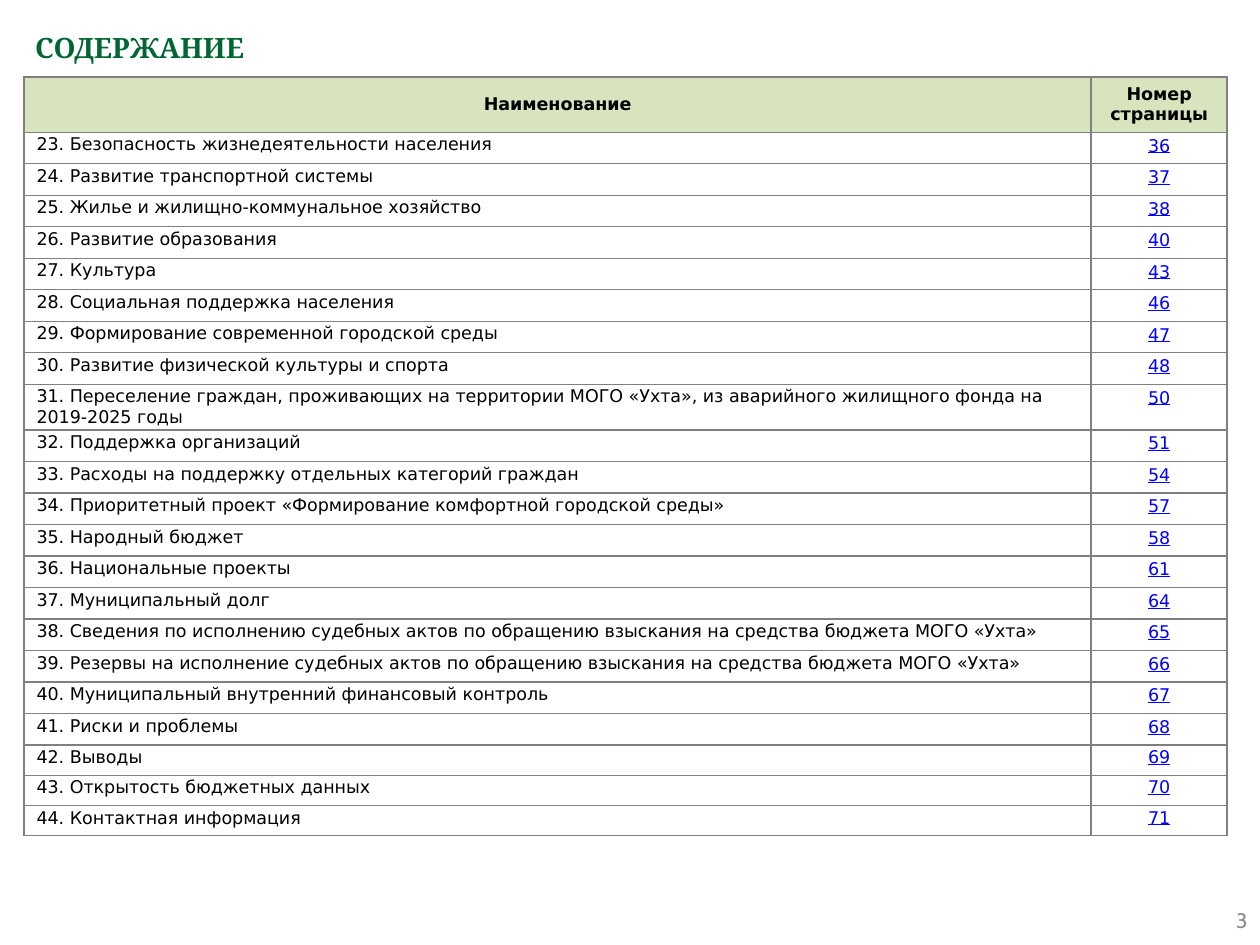
from lxml import etree
from pptx import Presentation
from pptx.dml.color import RGBColor
from pptx.enum.text import MSO_ANCHOR, PP_ALIGN
from pptx.oxml.ns import qn
from pptx.util import Inches, Pt

LEFT, CENTER, RIGHT = PP_ALIGN.LEFT, PP_ALIGN.CENTER, PP_ALIGN.RIGHT
TOP, MIDDLE = MSO_ANCHOR.TOP, MSO_ANCHOR.MIDDLE

BLACK, BLUE, GREEN, GRAY = "000000", "0000FF", "006633", "8C8C8C"
HEAD_FILL, BORDER = "D7E4BD", "808080"
FIRST = 23
TOPICS = [
    ("Безопасность жизнедеятельности населения", 36),
    ("Развитие транспортной системы", 37),
    ("Жилье и жилищно-коммунальное хозяйство", 38),
    ("Развитие образования", 40),
    ("Культура", 43),
    ("Социальная поддержка населения", 46),
    ("Формирование современной городской среды", 47),
    ("Развитие физической культуры и спорта", 48),
    ("Переселение граждан, проживающих на территории МОГО «Ухта», "
     "из аварийного жилищного фонда на 2019-2025 годы", 50),
    ("Поддержка организаций", 51),
    ("Расходы на поддержку отдельных категорий граждан", 54),
    ("Приоритетный проект «Формирование комфортной городской среды»", 57),
    ("Народный бюджет", 58),
    ("Национальные проекты", 61),
    ("Муниципальный долг", 64),
    ("Сведения по исполнению судебных актов по обращению взыскания "
     "на средства бюджета МОГО «Ухта»", 65),
    ("Резервы на исполнение судебных актов по обращению взыскания "
     "на средства бюджета МОГО «Ухта»", 66),
    ("Муниципальный внутренний финансовый контроль", 67),
    ("Риски и проблемы", 68),
    ("Выводы", 69),
    ("Открытость бюджетных данных", 70),
    ("Контактная информация", 71),
]
HEAD_ROW, ROW, LAST_ROW = 0.44, 0.25, 0.24
LAST_COUNT = 3


def color(code):
    return RGBColor.from_string(code)


def write(frame, text, font, size, code, align=LEFT, bold=False, line=False):
    frame.text = text
    par = frame.paragraphs[0]
    par.alignment = align
    style = par.runs[0].font
    style.name, style.size = font, Pt(size)
    style.bold, style.underline = bold, line
    style.color.rgb = color(code)
    return par


def add_text(slide, box, text, font, size, code, anchor=TOP, **look):
    frame = slide.shapes.add_textbox(*map(Inches, box)).text_frame
    frame.word_wrap = True
    frame.vertical_anchor = anchor
    return write(frame, text, font, size, code, **look)


def set_border(cell):
    props = cell._tc.get_or_add_tcPr()
    for spot, side in enumerate(("a:lnL", "a:lnR", "a:lnT", "a:lnB")):
        edge = etree.Element(qn(side), w=str(Pt(1)))
        fill = etree.SubElement(edge, qn("a:solidFill"))
        etree.SubElement(fill, qn("a:srgbClr"), val=BORDER)
        props.insert(spot, edge)


def fill_cell(cell, text, code=BLACK, pad=0.02, fill=None, anchor=TOP, **look):
    cell.margin_left = cell.margin_right = Inches(0.1)
    cell.margin_top = cell.margin_bottom = Inches(pad)
    cell.vertical_anchor = anchor
    if fill:
        cell.fill.solid()
        cell.fill.fore_color.rgb = color(fill)
    else:
        cell.fill.background()
    set_border(cell)
    write(cell.text_frame, text, "DejaVu Sans", 10, code, **look)


def add_contents(slide):
    count = len(TOPICS)
    plain = count - LAST_COUNT
    sizes = [HEAD_ROW] + [ROW] * plain + [LAST_ROW] * LAST_COUNT
    box = map(Inches, (0.19, 0.61, 9.55, sum(sizes)))
    table = slide.shapes.add_table(count + 1, 2, *box).table
    table.horz_banding = False
    for col, width in zip(table.columns, (8.47, 1.08)):
        col.width = Inches(width)
    for row, size in zip(table.rows, sizes):
        row.height = Inches(size)

    for col, text in enumerate(("Наименование", "Номер страницы")):
        fill_cell(table.cell(0, col), text, pad=0.03, fill=HEAD_FILL,
                  anchor=MIDDLE, align=CENTER, bold=True)
    for row, (topic, page) in enumerate(TOPICS, 1):
        fill_cell(table.cell(row, 0), f"{FIRST + row - 1}. {topic}")
        fill_cell(table.cell(row, 1), str(page), BLUE,
                  pad=0.03 if row <= plain else 0.02,
                  align=CENTER, line=True)


def main():
    deck = Presentation()
    deck.slide_width, deck.slide_height = Inches(10), Inches(7.5)
    slide = deck.slides.add_slide(deck.slide_layouts[6])
    add_contents(slide)
    title = add_text(slide, (0.18, 0.14, 6.02, 1.15), "СОДЕРЖАНИЕ",
                     "Cambria", 16, GREEN, bold=True)
    title.line_spacing = 1.2
    add_text(slide, (7.67, 7.1, 2.33, 0.4), "3", "Cabin", 12, GRAY,
             anchor=MIDDLE, align=RIGHT)
    deck.save("out.pptx")


if __name__ == "__main__":
    main()
